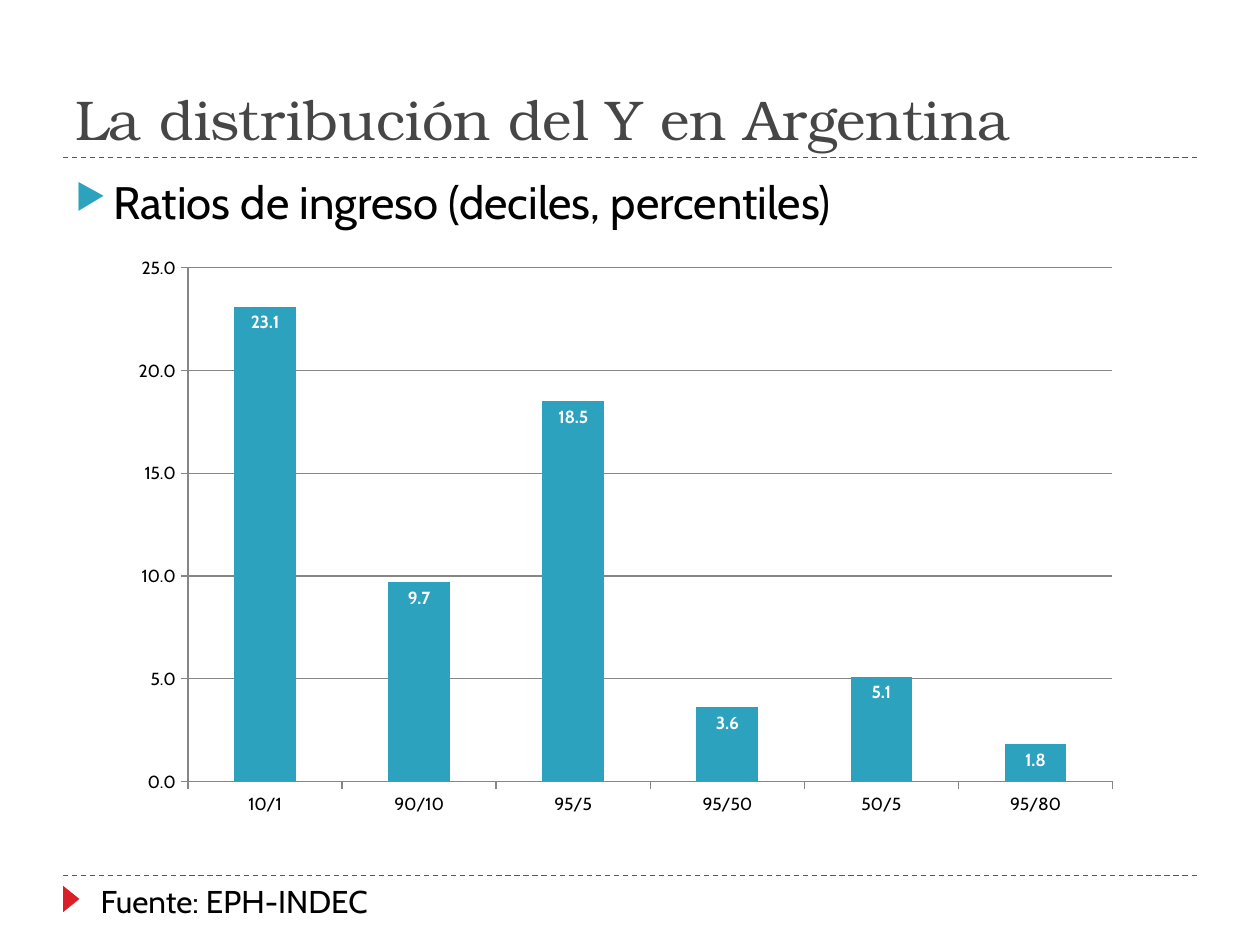
from lxml import etree
from pptx import Presentation
from pptx.chart import data
from pptx.dml import color
from pptx.enum import chart as kinds, dml, shapes, text
from pptx.oxml import ns
from pptx import util as u

HUES = {"red": "DA1F28", "blue": "2DA2BF", "gray": "464646",
        "grid": "868686", "black": "000000", "white": "FFFFFF"}
RATIOS = {"10/1": 23.1, "90/10": 9.7, "95/5": 18.5,
          "95/50": 3.6, "50/5": 5.1, "95/80": 1.8}


def rgb(name):
    """Return the named colour."""
    return color.RGBColor.from_string(HUES[name])


def apply(item, values):
    """Set each attribute of an item from a dict."""
    for key, value in values.items():
        setattr(item, key, value)


def add(parent, tag, **attrs):
    """Append an XML child with the given attributes."""
    return etree.SubElement(parent, ns.qn(tag), attrs)


class Deck:
    """Hold the style and the current slide."""

    head = "TeX Gyre Bonum"
    body = "Cabin"

    def __init__(self, slide):
        """Keep the slide to draw on."""
        self.slide = slide

    def rule(self, y):
        """Draw a dashed line across the slide."""
        line = self.slide.shapes.add_connector(
            shapes.MSO_CONNECTOR.STRAIGHT, u.Inches(0.5), u.Inches(y), u.Inches(9.5), u.Inches(y))
        apply(line.line, {"width": u.Pt(0.75), "dash_style": dml.MSO_LINE.DASH})
        line.line.color.rgb = rgb("red")
        add(line._element.spPr, "a:effectLst")

    def mark(self, box):
        """Draw a red triangle that points right."""
        tri = self.slide.shapes.add_shape(
            shapes.MSO_SHAPE.ISOSCELES_TRIANGLE, *map(u.Inches, box))
        tri.rotation = 90
        tri.shadow.inherit = False
        tri.fill.solid()
        tri.fill.fore_color.rgb = rgb("red")
        tri.line.fill.background()

    def label(self, box, words, size, font=body, hue="black", anchor="TOP"):
        """Put one paragraph in a box and return it."""
        frame = self.slide.shapes.add_textbox(*map(u.Inches, box)).text_frame
        apply(frame, {"word_wrap": True, "vertical_anchor": text.MSO_ANCHOR[anchor]})
        para = frame.paragraphs[0]
        run = para.add_run()
        run.text = words
        apply(run.font, {"name": font, "size": u.Pt(size)})
        run.font.color.rgb = rgb(hue)
        return para

    def bullet(self, box, words, size):
        """Put one paragraph with a blue arrow bullet in a box."""
        para = self.label(box, words, size)
        para.space_before = u.Pt(6)
        props = para._p.get_or_add_pPr()
        indent = u.Inches(0.3)
        props.set("marL", str(indent))
        props.set("indent", str(-indent))
        add(add(props, "a:buClr"), "a:srgbClr", val=HUES["blue"])
        add(props, "a:buSzPct", val="76000")
        add(props, "a:buChar", char="▶")

    def bars(self, box, values):
        """Draw a column chart with labelled bars."""
        table = data.CategoryChartData(number_format="0.0")
        table.categories = list(values)
        table.add_series("Series 1", list(values.values()))
        chart = self.slide.shapes.add_chart(
            kinds.XL_CHART_TYPE.COLUMN_CLUSTERED, *map(u.Inches, box), table).chart
        apply(chart, {"has_legend": False, "has_title": False})
        apply(chart.font, {"name": self.body, "size": u.Pt(10)})
        chart.font.color.rgb = rgb("black")

        for axis in (chart.category_axis, chart.value_axis):
            axis.major_tick_mark = kinds.XL_TICK_MARK.OUTSIDE
            axis.format.line.color.rgb = rgb("grid")
        axis = chart.value_axis
        apply(axis, {"minimum_scale": 0, "maximum_scale": 25, "major_unit": 5,
                     "has_major_gridlines": True})
        axis.major_gridlines.format.line.color.rgb = rgb("grid")
        apply(axis.tick_labels, {"number_format": "0.0", "number_format_is_linked": False})

        plot = chart.plots[0]
        apply(plot, {"gap_width": 150, "vary_by_categories": False})
        series = plot.series[0]
        series.format.fill.solid()
        series.format.fill.fore_color.rgb = rgb("blue")
        labels = series.data_labels
        apply(labels, {"show_value": True, "number_format": "0.0",
                       "number_format_is_linked": False,
                       "position": kinds.XL_LABEL_POSITION.INSIDE_END})
        apply(labels.font, {"name": self.body, "size": u.Pt(10), "bold": True})
        labels.font.color.rgb = rgb("white")


def main():
    """Build the slide and save it."""
    show = Presentation()
    apply(show, {"slide_width": u.Inches(10), "slide_height": u.Inches(7.5)})
    deck = Deck(show.slides.add_slide(show.slide_layouts[6]))
    for y in (6.95, 1.25):
        deck.rule(y)
    deck.mark((0.46, 7.07, 0.21, 0.13))
    deck.label((0.5, 0.17, 9, 1.08), "La distribución del Y en Argentina",
               32, deck.head, "gray", "BOTTOM")
    deck.bullet((0.5, 1.33, 9, 5.4), "Ratios de ingreso (deciles, percentiles)", 26)
    deck.bars((0.94, 1.95, 8.05, 4.61), RATIOS)
    deck.label((0.7, 6.95, 3.75, 0.4), "Fuente: EPH-INDEC", 18)
    show.save("out.pptx")


if __name__ == "__main__":
    main()
